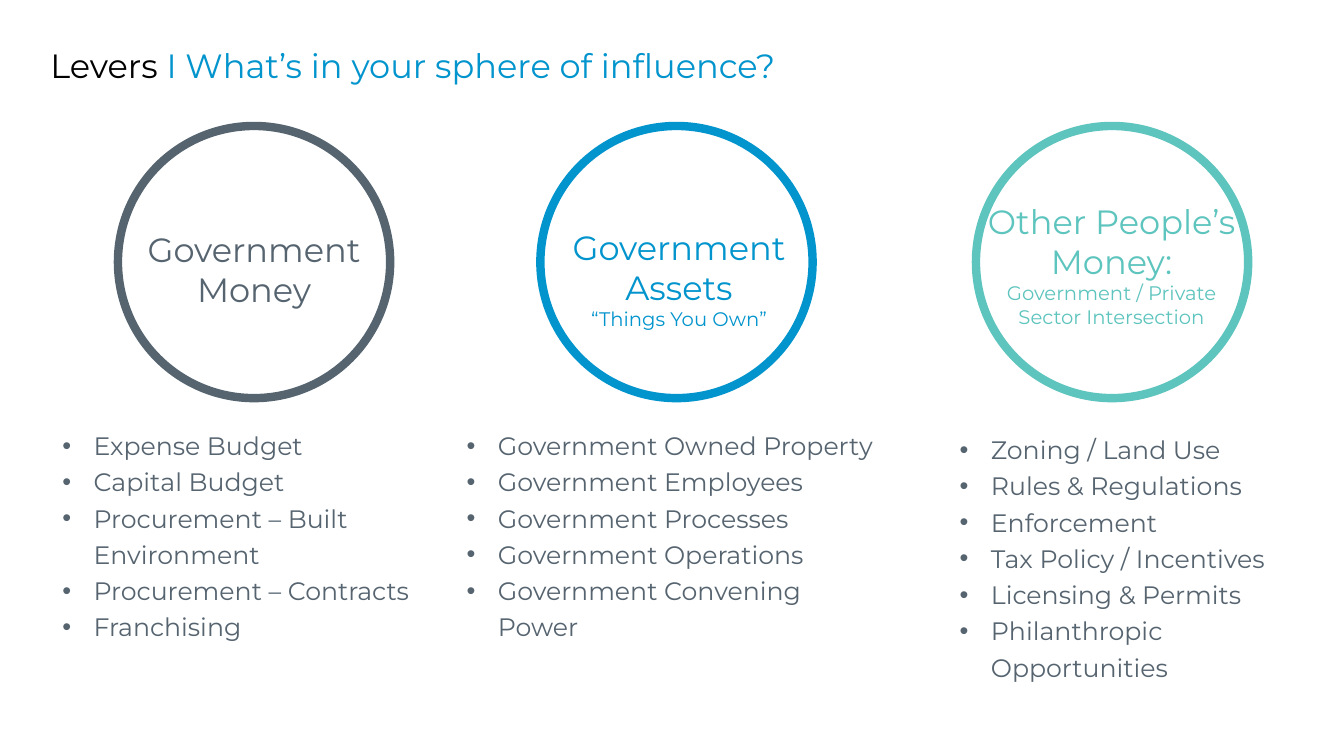
from dataclasses import dataclass

from lxml import etree
from pptx import Presentation
from pptx import util as u
from pptx.dml.color import RGBColor
from pptx.enum import shapes, text
from pptx.oxml.ns import qn
from pptx.slide import Slide

FONT = "Montserrat"
COLORS = {"black": "000000", "slate": "566470", "blue": "0294CD", "teal": "5DC4BE"}
CIRCLE_TOP, CIRCLE_SIZE = 1.25, 2.7
BULLET_INDENT = 0.31

Box = tuple[float, float, float, float]


@dataclass
class Lever:
    color: str
    circle_left: float
    label_box: Box
    heading: str
    subheading: str
    list_box: Box
    items: list[str]


LEVERS = [
    Lever("slate", 1.17, (1.2, 2.22, 2.64, 0.91), "Government Money", "",
          (0.52, 4.16, 4, 1.89),
          ["Expense Budget", "Capital Budget", "Procurement – Built Environment",
           "Procurement – Contracts", "Franchising"]),
    Lever("blue", 5.36, (5.41, 2.2, 2.65, 1.14), "Government Assets", "“Things You Own”",
          (4.53, 4.16, 4.37, 1.88),
          ["Government Owned Property", "Government Employees", "Government Processes",
           "Government Operations", "Government Convening Power"]),
    Lever("teal", 9.68, (9.63, 1.94, 2.79, 1.38), "Other People’s Money:",
          "Government / Private Sector Intersection",
          (9.42, 4.2, 3.34, 2.24),
          ["Zoning / Land Use", "Rules & Regulations", "Enforcement",
           "Tax Policy / Incentives", "Licensing & Permits", "Philanthropic Opportunities"]),
]


def inches(box: Box) -> list[u.Length]:
    return [u.Inches(value) for value in box]


def add_run(paragraph, content: str, *, size: float, color: str) -> None:
    run = paragraph.add_run()
    run.text = content
    run.font.name = FONT
    run.font.size = u.Pt(size)
    run.font.color.rgb = RGBColor.from_string(COLORS[color])


def add_bullet(paragraph) -> None:
    """Give the paragraph a round bullet with a hanging indent."""
    properties = paragraph._p.get_or_add_pPr()
    indent = u.Inches(BULLET_INDENT)
    properties.set("marL", str(indent))
    properties.set("indent", str(-indent))
    font = etree.SubElement(properties, qn("a:buFont"))
    font.set("typeface", "Arial")
    bullet = etree.SubElement(properties, qn("a:buChar"))
    bullet.set("char", "•")


def add_text(parent, box: Box, lines: list[tuple[str, float]], *, color: str,
             align: text.PP_ALIGN = text.PP_ALIGN.LEFT, spacing: float = 1.0,
             bulleted: bool = False) -> None:
    """Add a text box with one paragraph for each (text, point size) pair."""
    frame = parent.add_textbox(*inches(box)).text_frame
    frame.word_wrap = True
    frame.auto_size = text.MSO_AUTO_SIZE.SHAPE_TO_FIT_TEXT
    for index, (content, size) in enumerate(lines):
        paragraph = frame.add_paragraph() if index else frame.paragraphs[0]
        paragraph.alignment = align
        paragraph.line_spacing = spacing
        if bulleted:
            add_bullet(paragraph)
        add_run(paragraph, content, size=size, color=color)


def add_title(slide: Slide) -> None:
    title = slide.shapes.title
    title.left, title.top, title.width, title.height = inches((0.4, 0.35, 11.96, 0.92))
    frame = title.text_frame
    frame.auto_size = text.MSO_AUTO_SIZE.NONE
    frame.word_wrap = True
    frame.vertical_anchor = text.MSO_ANCHOR.TOP
    frame.margin_left = frame.margin_right = u.Inches(0.1)
    frame.margin_top = frame.margin_bottom = u.Inches(0.1)
    paragraph = frame.paragraphs[0]
    paragraph.alignment = text.PP_ALIGN.LEFT
    add_run(paragraph, "Levers ", size=24, color="black")
    add_run(paragraph, "I What’s in your sphere of influence?", size=24, color="blue")


def add_circle(slide: Slide, lever: Lever) -> None:
    """Group a lever's label with the ring around it."""
    group = slide.shapes.add_group_shape().shapes
    lines = [(lever.heading, 24)]
    if lever.subheading:
        lines.append((lever.subheading, 14))
    add_text(group, lever.label_box, lines, color=lever.color, align=text.PP_ALIGN.CENTER)
    circle = group.add_shape(
        shapes.MSO_SHAPE.FLOWCHART_CONNECTOR,
        *inches((lever.circle_left, CIRCLE_TOP, CIRCLE_SIZE, CIRCLE_SIZE)))
    circle.shadow.inherit = False
    circle.fill.background()
    circle.line.color.rgb = RGBColor.from_string(COLORS[lever.color])
    circle.line.width = u.Pt(6)


def main() -> None:
    presentation = Presentation()
    presentation.slide_width = u.Inches(13.33)
    presentation.slide_height = u.Inches(7.5)
    slide = presentation.slides.add_slide(presentation.slide_layouts[5])
    add_title(slide)
    for lever in LEVERS:
        add_circle(slide, lever)
    for lever in LEVERS:
        add_text(slide.shapes, lever.list_box, [(item, 18) for item in lever.items],
                 color="slate", spacing=1.2, bulleted=True)
    presentation.save("out.pptx")


if __name__ == "__main__":
    main()
